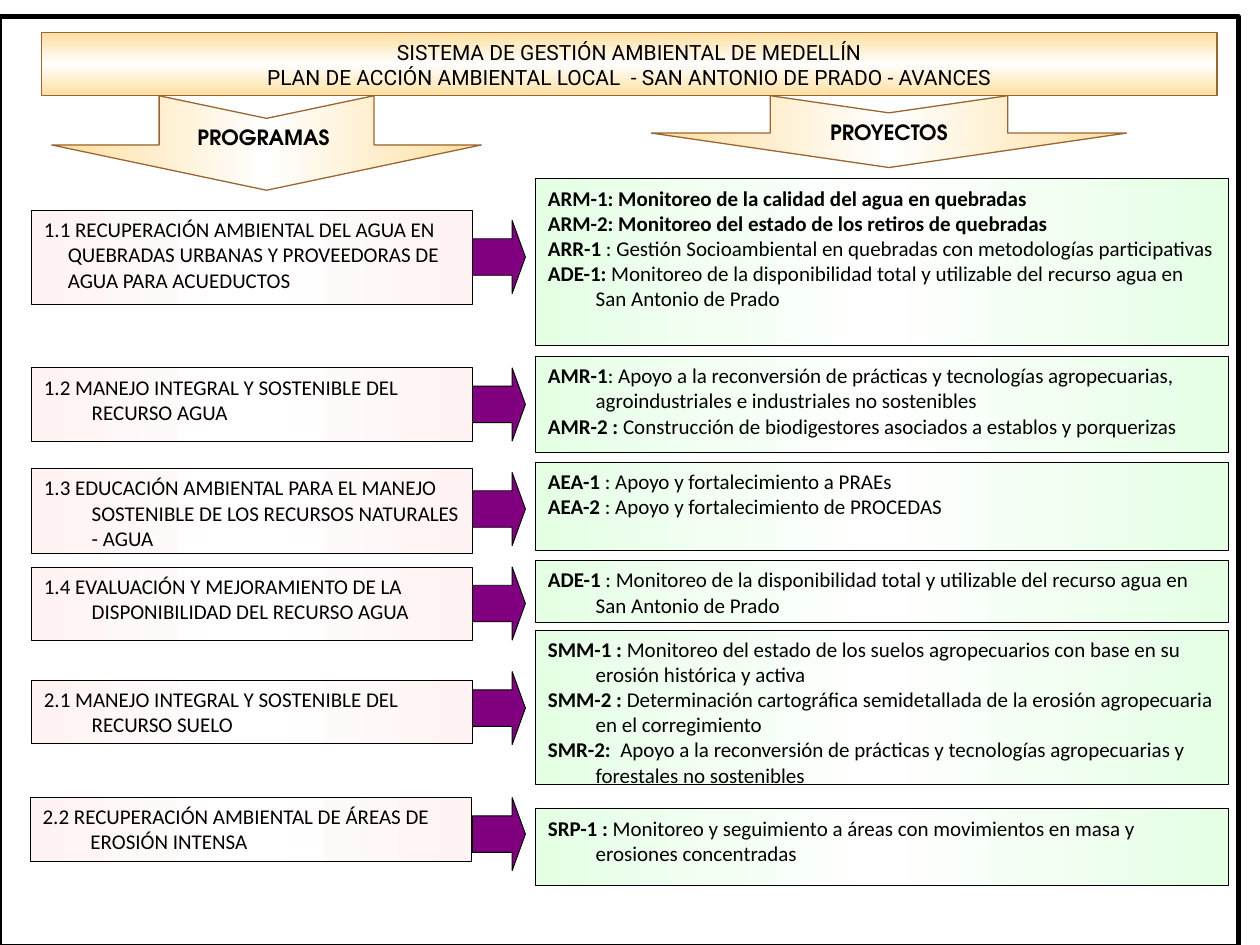
from copy import deepcopy

from pptx import Presentation
from pptx.dml.color import RGBColor
from pptx.enum.shapes import MSO_SHAPE
from pptx.enum.text import MSO_ANCHOR, MSO_AUTO_SIZE, PP_ALIGN
from pptx.oxml.ns import qn
from pptx.util import Inches, Pt

BLACK = RGBColor(0x00, 0x00, 0x00)
WHITE = RGBColor(0xFF, 0xFF, 0xFF)
PINK = RGBColor(0xFF, 0xF3, 0xF3)
GREEN = RGBColor(0xE5, 0xFF, 0xE5)
GOLD = RGBColor(0xFF, 0xDF, 0x9F)
BROWN = RGBColor(0x99, 0x66, 0x33)
PURPLE = RGBColor(0x80, 0x00, 0x80)

BODY = {"name": "Calibri", "size": Pt(12), "bold": False}
TITLE = {"name": "Roboto", "size": Pt(12), "bold": False}
HEADING = {"name": "TeX Gyre Adventor", "size": Pt(12), "bold": True}

HANGING = 0.38
PROGRAM_WIDTH, PROJECT_LEFT, PROJECT_WIDTH = 3.5, 4.25, 5.5
ARROW_LEFT, ARROW_WIDTH, ARROW_HEIGHT = 3.75, 0.42, 0.58

# Program box (left, top, height), its text and hanging indent, arrow top,
# project box (top, height), projects as (bold code, description)
ROWS = [
    ((0.25, 1.67, 0.75), "1.1 RECUPERACIÓN AMBIENTAL DEL AGUA EN QUEBRADAS URBANAS Y "
     "PROVEEDORAS DE AGUA PARA ACUEDUCTOS", 0.19, 1.75, (1.42, 1.32), [
         ("ARM-1: Monitoreo de la calidad del agua en quebradas", ""),
         ("ARM-2: Monitoreo del estado de los retiros de quebradas", ""),
         ("ARR-1", " : Gestión Socioambiental en quebradas con metodologías participativas"),
         ("ADE-1: ", "Monitoreo de la disponibilidad total y utilizable del recurso agua "
          "en San Antonio de Prado")]),
    ((0.25, 2.92, 0.58), "1.2 MANEJO INTEGRAL Y SOSTENIBLE DEL RECURSO AGUA",
     HANGING, 2.92, (2.83, 0.76), [
         ("AMR-1", ": Apoyo a la reconversión de prácticas y tecnologías agropecuarias, "
          "agroindustriales e industriales no sostenibles"),
         ("AMR-2 : ", "Construcción de biodigestores asociados a establos y porquerizas")]),
    ((0.25, 3.72, 0.67), "1.3 EDUCACIÓN AMBIENTAL PARA EL MANEJO SOSTENIBLE DE LOS "
     "RECURSOS NATURALES - AGUA", HANGING, 3.75, (3.67, 0.7), [
         ("AEA-1", " : Apoyo y fortalecimiento a PRAEs"),
         ("AEA-2", " : Apoyo y fortalecimiento de PROCEDAS")]),
    ((0.25, 4.5, 0.58), "1.4 EVALUACIÓN Y MEJORAMIENTO DE LA DISPONIBILIDAD DEL RECURSO AGUA",
     HANGING, 4.5, (4.45, 0.49), [
         ("ADE-1", " : Monitoreo de la disponibilidad total y utilizable del recurso agua "
          "en San Antonio de Prado")]),
    ((0.25, 5.4, 0.5), "2.1 MANEJO INTEGRAL Y SOSTENIBLE DEL RECURSO SUELO",
     HANGING, 5.33, (5, 1.23), [
         ("SMM-1 : ", "Monitoreo del estado de los suelos agropecuarios con base en su "
          "erosión histórica y activa"),
         ("SMM-2 : ", "Determinación cartográfica semidetallada de la erosión agropecuaria "
          "en el corregimiento"),
         ("SMR-2:  ", "Apoyo a la reconversión de prácticas y tecnologías agropecuarias y "
          "forestales no sostenibles")]),
    ((0.24, 6.33, 0.51), "2.2 RECUPERACIÓN AMBIENTAL DE ÁREAS DE EROSIÓN INTENSA",
     HANGING, 6.33, (6.42, 0.61), [
         ("SRP-1 : ", "Monitoreo y seguimiento a áreas con movimientos en masa y "
          "erosiones concentradas")]),
]


def outline(shape, color, width):
    shape.line.color.rgb = color
    shape.line.width = Pt(width)


def fill_gradient(shape, edge, angle):
    """Fill from the edge colour through white and back."""
    shape.fill.gradient()
    shape.fill.gradient_angle = angle
    stop_list = shape.fill._xPr.find(qn("a:gradFill")).find(qn("a:gsLst"))
    stop_list.insert(1, deepcopy(stop_list[0]))
    stops = zip(shape.fill.gradient_stops, (0, 0.5, 1), (edge, WHITE, edge))
    for stop, position, color in stops:
        stop.position = position
        stop.color.rgb = color


def add_block(slide, kind, left, top, width, height):
    block = slide.shapes.add_shape(
        kind, Inches(left), Inches(top), Inches(width), Inches(height))
    block.shadow.inherit = False
    return block


def write(shape, paragraphs, style, align, hanging=0):
    """Write paragraphs, each a list of (text, format changes)."""
    frame = shape.text_frame
    frame.word_wrap = True
    frame.auto_size = MSO_AUTO_SIZE.NONE
    frame.vertical_anchor = MSO_ANCHOR.TOP
    for index, parts in enumerate(paragraphs):
        paragraph = frame.add_paragraph() if index else frame.paragraphs[0]
        paragraph.alignment = align
        if hanging:
            properties = paragraph._p.get_or_add_pPr()
            properties.set("marL", str(Inches(hanging)))
            properties.set("indent", str(-Inches(hanging)))
        for text, changes in parts:
            run = paragraph.add_run()
            run.text = text
            run.font.color.rgb = BLACK
            for attribute, value in {**style, **changes}.items():
                setattr(run.font, attribute, value)


def add_banner(slide, left, top, width, height):
    banner = slide.shapes.title
    banner.left, banner.top = Inches(left), Inches(top)
    banner.width, banner.height = Inches(width), Inches(height)
    fill_gradient(banner, GOLD, 90)
    outline(banner, BROWN, 0.75)
    lines = ["SISTEMA DE GESTIÓN AMBIENTAL DE MEDELLÍN",
             "PLAN DE ACCIÓN AMBIENTAL LOCAL  - SAN ANTONIO DE PRADO - AVANCES"]
    write(banner, [[(line, {})] for line in lines], TITLE, PP_ALIGN.CENTER)


def add_heading_arrow(slide, text, left, top, width, height):
    """Place a down arrow in the box; it is a right arrow turned a quarter."""
    arrow = add_block(slide, MSO_SHAPE.NOTCHED_RIGHT_ARROW,
                      left + (width - height) / 2, top + (height - width) / 2,
                      height, width)
    arrow.rotation = 90
    arrow.adjustments[0], arrow.adjustments[1] = 0.5, 0.479
    fill_gradient(arrow, GOLD, 90)
    outline(arrow, BROWN, 0.75)
    write(arrow, [[(text, {})]], HEADING, PP_ALIGN.CENTER)
    # Turn the text back so that it reads level
    arrow.text_frame._txBody.bodyPr.set("vert", "vert270")
    for side in ("left", "top", "right", "bottom"):
        setattr(arrow.text_frame, f"margin_{side}", Inches(0.05))


def add_text_box(slide, box, color, paragraphs, hanging):
    block = add_block(slide, MSO_SHAPE.RECTANGLE, *box)
    fill_gradient(block, color, 0)
    outline(block, BLACK, 0.5)
    write(block, paragraphs, BODY, PP_ALIGN.LEFT, hanging)


def add_row(slide, program_box, program, hanging, arrow_top, project_box, projects):
    # Program
    left, top, height = program_box
    add_text_box(slide, (left, top, PROGRAM_WIDTH, height), PINK,
                 [[(program, {})]], hanging)
    # Projects
    top, height = project_box
    paragraphs = [[(code, {"bold": True})] + ([(detail, {})] if detail else [])
                  for code, detail in projects]
    add_text_box(slide, (PROJECT_LEFT, top, PROJECT_WIDTH, height), GREEN,
                 paragraphs, HANGING)
    # Arrow from program to projects
    arrow = add_block(slide, MSO_SHAPE.RIGHT_ARROW, ARROW_LEFT, arrow_top,
                      ARROW_WIDTH, ARROW_HEIGHT)
    arrow.adjustments[0], arrow.adjustments[1] = 0.5, 0.25
    arrow.fill.solid()
    arrow.fill.fore_color.rgb = PURPLE
    outline(arrow, BLACK, 0.5)


def main():
    presentation = Presentation()
    presentation.slide_width, presentation.slide_height = Inches(10), Inches(7.5)
    slide = presentation.slides.add_slide(presentation.slide_layouts[5])

    # Frame
    frame = add_block(slide, MSO_SHAPE.RECTANGLE, 0, 0.13, 9.83, 7.38)
    frame.fill.background()
    outline(frame, BLACK, 2.5)

    # Title and column headings
    add_banner(slide, 0.33, 0.26, 9.33, 0.5)
    add_heading_arrow(slide, "PROGRAMAS ", 0.41, 0.76, 3.41, 0.75)
    add_heading_arrow(slide, "PROYECTOS", 5.17, 0.76, 3.77, 0.57)

    # Programs and their projects
    for row in ROWS:
        add_row(slide, *row)

    presentation.save("out.pptx")


if __name__ == "__main__":
    main()
